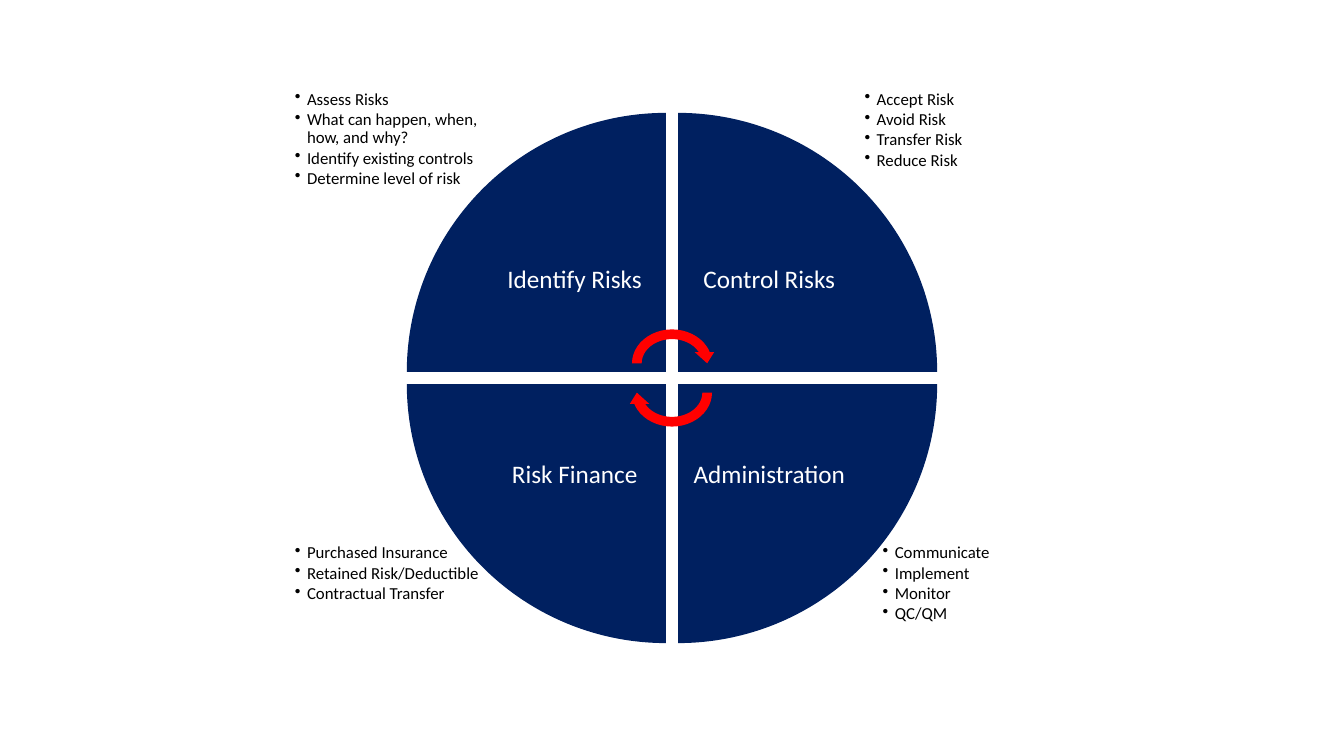
import dataclasses

import pptx
import pptx.dml.color
import pptx.enum.shapes
import pptx.enum.text
import pptx.oxml
import pptx.oxml.ns
import pptx.util
from lxml import etree

Inches = pptx.util.Inches
Pt = pptx.util.Pt
Shape = pptx.enum.shapes.MSO_SHAPE
Align = pptx.enum.text.PP_ALIGN
Anchor = pptx.enum.text.MSO_ANCHOR


@dataclasses.dataclass(frozen=True)
class Theme:
    navy: str = "002060"
    red: str = "FF0000"
    white: str = "FFFFFF"
    black: str = "000000"
    font: str = "Calibri"
    label: int = 18
    note: int = 12


THEME = Theme()
WIDE, HIGH = 13.33, 7.5
MID_X, MID_Y = WIDE / 2, HIGH / 2

# Wheel measures, all taken from the centre of the slide
GAP = 0.12
WEDGE = 2.57
LABEL = 1.81
ARROW_W, ARROW_H, ARROW_OFF = 0.89, 0.77, 0.145
NOTE_W, NOTE_H = 1.97, 1.34
NOTE_X, NOTE_Y = 1.84, 1.58  # from the centre to a note's near edge
HANG = 0.12

# Column, row, turn, label, note indent, note lines
PARTS = [
    (-1, -1, 0, "Identify Risks", 0.12,
     ["Assess Risks", "What can happen, when, how, and why?",
      "Identify existing controls", "Determine level of risk"]),
    (1, -1, 90, "Control Risks", 0.12,
     ["Accept Risk", "Avoid Risk", "Transfer Risk", "Reduce Risk"]),
    (1, 1, 180, "Administration", 0.3,
     ["Communicate", "Implement", "Monitor", "QC/QM"]),
    (-1, 1, 270, "Risk Finance", 0.12,
     ["Purchased Insurance", "Retained Risk/Deductible",
      "Contractual Transfer"]),
]


def place(mid, side, off, size):
    """Start of a span that lies off the centre on the given side."""
    return mid + off if side > 0 else mid - off - size


def quad(col, row, off_x, off_y, wide, high):
    """Box in one quarter of the slide."""
    return [Inches(v) for v in (place(MID_X, col, off_x, wide),
                                place(MID_Y, row, off_y, high), wide, high)]


def add_solid(slide, kind, box, color, turn):
    shape = slide.shapes.add_shape(kind, *box)
    shape.shadow.inherit = False
    shape.fill.solid()
    shape.fill.fore_color.rgb = pptx.dml.color.RGBColor.from_string(color)
    shape.line.fill.background()
    shape.rotation = turn


def add_text(slide, box, lines, size, color, inset):
    frame = slide.shapes.add_textbox(*box).text_frame
    frame.word_wrap = True
    frame.margin_left = frame.margin_right = Inches(inset)
    frame.margin_top = frame.margin_bottom = Inches(inset)
    frame.text = "\n".join(lines)
    for para in frame.paragraphs:
        para.line_spacing = 0.9
        para.font.name = THEME.font
        para.font.size = Pt(size)
        para.font.color.rgb = pptx.dml.color.RGBColor.from_string(color)
    return frame


def add_label(slide, box, text):
    frame = add_text(slide, box, [text], THEME.label, THEME.white, 0.14)
    frame.vertical_anchor = Anchor.MIDDLE
    frame.paragraphs[0].alignment = Align.CENTER


def add_note(slide, box, lines, indent):
    frame = add_text(slide, box, lines, THEME.note, THEME.black, 0.07)
    for para in frame.paragraphs:
        para.space_after = Pt(1.6)
        props = para._p.get_or_add_pPr()
        props.set("marL", str(Inches(indent)))
        props.set("indent", str(-Inches(HANG)))
        mark = etree.Element(pptx.oxml.ns.qn("a:buChar"), char="•")
        props.insert_element_before(mark, "a:tabLst", "a:defRPr", "a:extLst")


def main():
    deck = pptx.Presentation()
    deck.slide_width, deck.slide_height = Inches(WIDE), Inches(HIGH)
    slide = deck.slides.add_slide(deck.slide_layouts[6])

    # Notes at the corners
    for col, row, _, _, indent, lines in PARTS:
        box = quad(col, row, NOTE_X, NOTE_Y, NOTE_W, NOTE_H)
        add_note(slide, box, lines, indent)

    # Wheel quarters with their labels
    half = GAP / 2
    for col, row, turn, text, _, _ in PARTS:
        wedge = quad(col, row, half, half, WEDGE, WEDGE)
        add_solid(slide, Shape.PIE_WEDGE, wedge, THEME.navy, turn)
        add_label(slide, quad(col, row, half, half, LABEL, LABEL), text)

    # Cycle arrows at the hub
    for row, turn in ((-1, 0), (1, 180)):
        top = MID_Y + row * ARROW_OFF - ARROW_H / 2
        box = [Inches(v) for v in (MID_X - ARROW_W / 2, top, ARROW_W, ARROW_H)]
        add_solid(slide, Shape.CIRCULAR_ARROW, box, THEME.red, turn)

    deck.save("out.pptx")


if __name__ == "__main__":
    main()
